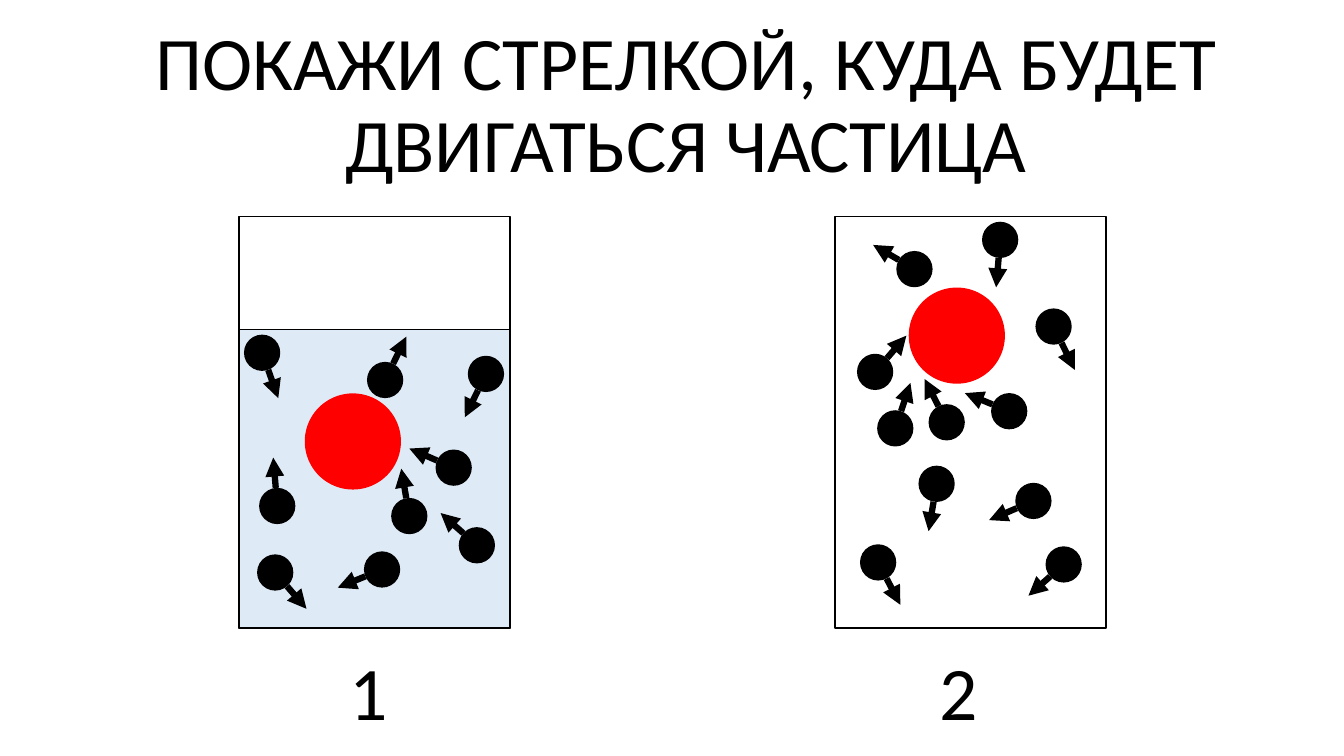
from math import atan2, cos, sin

from lxml import etree
from pptx import Presentation
from pptx.dml.color import RGBColor
from pptx.enum.shapes import MSO_CONNECTOR, MSO_SHAPE
from pptx.enum.text import MSO_ANCHOR, MSO_AUTO_SIZE, PP_ALIGN
from pptx.oxml.ns import qn
from pptx.util import Inches, Pt

RECTANGLE, OVAL = MSO_SHAPE.RECTANGLE, MSO_SHAPE.OVAL
STRAIGHT = MSO_CONNECTOR.STRAIGHT
BOTTOM, CENTER = MSO_ANCHOR.BOTTOM, PP_ALIGN.CENTER
NO_FIT = MSO_AUTO_SIZE.NONE

COLORS = {
    "ink": "000000",
    "vessel": "FFFFFF",
    "liquid": "DEEBF7",
    "particle": "FF0000",
}
FRAME_FORMAT = {"word_wrap": True, "auto_size": NO_FIT, "vertical_anchor": BOTTOM}
FONT_FORMAT = {"name": "Calibri", "size": Pt(54), "bold": False}

VESSEL_TOP, VESSEL_WIDTH, VESSEL_HEIGHT = 2.15, 2.69, 4.08
LIQUID_TOP, LIQUID_HEIGHT = 3.27, 2.96
PARTICLE_SIZE, MOLECULE_SIZE = 0.94, 0.36
LABEL_TOP, LABEL_WIDTH, LABEL_HEIGHT = 6.45, 1.36, 0.89

# Each molecule: left, top, arrow tip x, arrow tip y
EXPERIMENTS = [
    {
        "label": "1", "label_left": 2.98, "vessel_left": 2.37,
        "has_liquid": True, "particle": (3.03, 3.91),
        "molecules": [
            (4.64, 3.53, 4.61, 4.14), (2.42, 3.32, 2.76, 3.95),
            (4.32, 4.46, 4.06, 4.45), (3.88, 4.94, 3.98, 4.65),
            (2.55, 5.5, 3.04, 6.04), (4.55, 5.23, 4.37, 5.09),
            (3.61, 5.47, 3.35, 5.83), (2.57, 4.84, 2.71, 4.54),
            (3.64, 3.59, 4.03, 3.34),
        ],
    },
    {
        "label": "2", "label_left": 8.83, "vessel_left": 8.28,
        "has_liquid": False, "particle": (9.02, 2.86),
        "molecules": [
            (9.21, 4.01, 9.17, 3.76), (8.7, 4.07, 9.03, 3.8),
            (10.07, 4.79, 9.81, 5.16), (9.11, 4.62, 9.21, 5.27),
            (8.5, 3.51, 8.99, 3.33), (10.37, 5.42, 10.2, 5.91),
            (9.83, 3.9, 9.57, 3.9), (9.74, 2.2, 9.88, 2.85),
            (8.53, 5.4, 8.93, 6), (10.27, 3.06, 10.66, 3.67),
            (8.89, 2.49, 8.66, 2.43),
        ],
    },
]


def color(name):
    return RGBColor.from_string(COLORS[name])


def set_attributes(target, values):
    for attribute, value in values.items():
        setattr(target, attribute, value)


def write_text(holder, text, line_spacing):
    set_attributes(holder.text_frame, FRAME_FORMAT)
    paragraph = holder.text_frame.paragraphs[0]
    set_attributes(paragraph, {"text": text, "alignment": CENTER,
                               "line_spacing": line_spacing})
    set_attributes(paragraph.font, FONT_FORMAT)
    paragraph.font.color.rgb = color("ink")


def add_figure(shapes, kind, box, fill, outline=None):
    figure = shapes.add_shape(kind, *map(Inches, box))
    figure.shadow.inherit = False
    figure.fill.solid()
    figure.fill.fore_color.rgb = color(fill)
    if outline:
        figure.line.color.rgb = color(outline)
        figure.line.width = Pt(1)
    else:
        figure.line.fill.background()


def add_arrow(shapes, start, tip):
    arrow = shapes.add_connector(STRAIGHT, *map(Inches, (*start, *tip)))
    arrow.line.color.rgb = color("ink")
    arrow.line.width = Pt(4.5)
    etree.SubElement(arrow.line._get_or_add_ln(), qn("a:tailEnd"), type="triangle")
    etree.SubElement(arrow._element.spPr, qn("a:effectLst"))


def add_molecule(slide, left, top, tip_x, tip_y):
    molecule = slide.shapes.add_group_shape().shapes
    add_figure(molecule, OVAL, (left, top, MOLECULE_SIZE, MOLECULE_SIZE), "ink")
    radius = MOLECULE_SIZE / 2
    center_x, center_y = left + radius, top + radius
    angle = atan2(tip_y - center_y, tip_x - center_x)
    start = center_x + radius * cos(angle), center_y + radius * sin(angle)
    add_arrow(molecule, start, (tip_x, tip_y))


def add_experiment(slide, experiment):
    label_box = (experiment["label_left"], LABEL_TOP, LABEL_WIDTH, LABEL_HEIGHT)
    label = slide.shapes.add_textbox(*map(Inches, label_box))
    write_text(label, experiment["label"], 0.8)
    left = experiment["vessel_left"]
    add_figure(slide.shapes, RECTANGLE,
               (left, VESSEL_TOP, VESSEL_WIDTH, VESSEL_HEIGHT), "vessel", "ink")
    if experiment["has_liquid"]:
        add_figure(slide.shapes, RECTANGLE,
                   (left, LIQUID_TOP, VESSEL_WIDTH, LIQUID_HEIGHT), "liquid", "ink")
    add_figure(slide.shapes, OVAL,
               (*experiment["particle"], PARTICLE_SIZE, PARTICLE_SIZE),
               "particle", "particle")
    for molecule in experiment["molecules"]:
        add_molecule(slide, *molecule)


def main():
    presentation = Presentation()
    set_attributes(presentation, {"slide_width": Inches(13.33),
                                  "slide_height": Inches(7.5)})
    slide = presentation.slides.add_slide(presentation.slide_layouts[5])
    heading = slide.shapes.title
    set_attributes(heading, {"left": Inches(0.34), "top": Inches(1.03),
                             "width": Inches(12.93), "height": Inches(0.89)})
    write_text(heading, "ПОКАЖИ СТРЕЛКОЙ, КУДА БУДЕТ ДВИГАТЬСЯ ЧАСТИЦА", 0.9)
    for experiment in EXPERIMENTS:
        add_experiment(slide, experiment)
    presentation.save("out.pptx")


if __name__ == "__main__":
    main()
